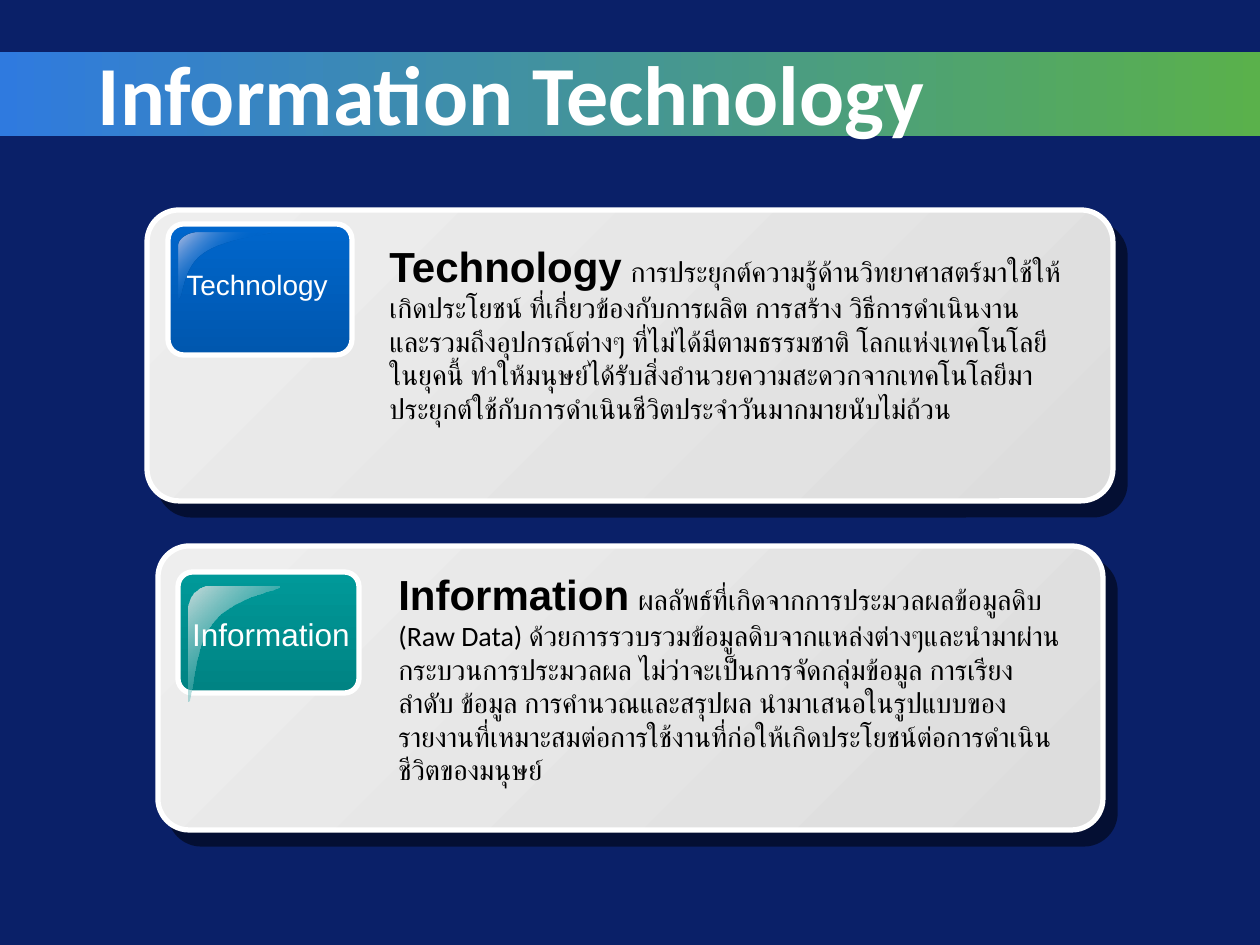
from lxml.etree import SubElement
from pptx import Presentation
from pptx.dml.color import RGBColor
from pptx.enum.shapes import MSO_SHAPE
from pptx.enum.text import MSO_ANCHOR, PP_ALIGN
from pptx.oxml import parse_xml
from pptx.oxml.ns import nsdecls, qn
from pptx.util import Pt

PX = 914400 // 126  # EMU in one px

TITLE = "Information Technology"
WHITE, BLACK = "FFFFFF", "000000"
CARD_STOPS = [(0, "EEEEEE", 100), (100, "DDDDDD", 100)]

# Gradient stops are (position %, colour, opacity %); boxes are px
CARDS = [
    dict(name="Technology", label_size=16,
         text="การประยุกต์ความรู้ด้านวิทยาศาสตร์มาใช้ให้เกิดประโยชน์ ที่เกี่ยวข้องกับการผลิต "
              "การสร้าง วิธีการดำเนินงาน และรวมถึงอุปกรณ์ต่างๆ ที่ไม่ได้มีตามธรรมชาติ "
              "โลกแห่งเทคโนโลยีในยุคนี้ ทำให้มนุษย์ได้รับสิ่งอำนวยความสะดวกจากเทคโนโลยี"
              "มาประยุกต์ใช้กับการดำเนินชีวิตประจำวันมากมายนับไม่ถ้วน",
         card=(147, 210, 966, 291), badge=(168, 224, 184, 131),
         gloss=(179, 233, 92, 66), label=(173, 261, 168, 47), body=(377, 234, 701, 233),
         badge_stops=[(0, "0066CC", 100), (100, "0057AE", 100)],
         gloss_stops=[(0, "B5C0E5", 100), (50, "0066CC", 0), (100, "B5C0E5", 100)]),
    dict(name="Information", label_size=18,
         text="ผลลัพธ์ที่เกิดจากการประมวลผลข้อมูลดิบ (Raw Data) "
              "ด้วยการรวบรวมข้อมูลดิบจากแหล่งต่างๆและนำมาผ่านกระบวนการประมวลผล "
              "ไม่ว่าจะเป็นการจัดกลุ่มข้อมูล การเรียงลำดับ ข้อมูล การคำนวณและสรุปผล "
              "นำมาเสนอในรูปแบบของรายงานที่เหมาะสมต่อการใช้งานที่ก่อให้เกิดประโยชน์"
              "ต่อการดำเนินชีวิตของมนุษย์",
         card=(158, 546, 945, 284), badge=(178, 572, 181, 121),
         gloss=(189, 587, 91, 116), label=(179, 609, 184, 50), body=(386, 562, 694, 267),
         badge_stops=[(0, "009999", 100), (100, "008383", 100)],
         gloss_stops=[(0, "C9DBDB", 100), (100, "009999", 0)]),
]

# Gloss outline as Bezier curves, in fractions of its box
GLOSS_CURVES = [
    [(0.21, 0), (0.11, 0), (0, 0.09), (0, 0.2)],
    [(0, 0.99), (0.06, 1), (0.03, 0.52), (0.28, 0.3)],
    [(0.28, 0.3), (0.53, 0.07), (1, 0.04), (1, 0)],
]


def color(value):
    return RGBColor.from_string(value)


def emu(box):
    return [v * PX for v in box]


def set_gradient(shape, stops, angle):
    shape.fill.background()
    stop_xml = "".join(
        f'<a:gs pos="{pos * 1000}"><a:srgbClr val="{c}"><a:alpha val="{alpha * 1000}"/>'
        f'</a:srgbClr></a:gs>' for pos, c, alpha in stops)
    grad = parse_xml(f'<a:gradFill {nsdecls("a")} rotWithShape="1"><a:gsLst>{stop_xml}</a:gsLst>'
                     f'<a:lin ang="{angle * 60000}" scaled="0"/></a:gradFill>')
    props = shape._element.spPr
    props.replace(props.find(qn("a:noFill")), grad)


def add_panel(shapes, kind, box, stops, angle, corner=None):
    sp = shapes.add_shape(kind, *emu(box))
    sp.shadow.inherit = False
    set_gradient(sp, stops, angle)
    if corner is None:
        sp.line.fill.background()
    else:
        sp.adjustments[0] = corner
        sp.line.color.rgb = color(WHITE)
        sp.line.width = Pt(3)
    return sp


def add_drop_shadow(sp):
    effects = sp._element.spPr.find(qn("a:effectLst"))
    shadow = SubElement(effects, qn("a:outerShdw"), blurRad="0", dist=str(Pt(10.6)),
                        dir=str(49 * 60000), algn="ctr", rotWithShape="0")
    black = SubElement(shadow, qn("a:srgbClr"), val=BLACK)
    SubElement(black, qn("a:alpha"), val="50000")


def curve_points(curve, box, steps=12):
    x, y, w, h = box
    for i in range(steps + 1):
        t = i / steps
        weights = ((1 - t) ** 3, 3 * t * (1 - t) ** 2, 3 * t * t * (1 - t), t ** 3)
        u, v = (sum(k * pt[axis] for k, pt in zip(weights, curve)) for axis in (0, 1))
        yield round((x + u * w) * PX), round((y + v * h) * PX)


def add_gloss(shapes, box, stops):
    points = [pt for curve in GLOSS_CURVES for pt in curve_points(curve, box)]
    builder = shapes.build_freeform(*points[0])
    builder.add_line_segments(points[1:], close=True)
    sp = builder.convert_to_shape()
    sp.shadow.inherit = False
    set_gradient(sp, stops, 45)
    sp.line.fill.background()


def add_run(p, text, size, font, rgb, bold=False):
    r = p.add_run()
    r.text = text
    for key, value in dict(size=Pt(size), name=font, bold=bold).items():
        setattr(r.font, key, value)
    r.font.color.rgb = color(rgb)


def add_text(shapes, box, runs, align, wrap):
    tf = shapes.add_textbox(*emu(box)).text_frame
    tf.word_wrap = wrap
    p = tf.paragraphs[0]
    p.alignment = align
    for run in runs:
        add_run(p, *run)


prs = Presentation()
prs.slide_width, prs.slide_height = emu((1260, 945))
s = prs.slides.add_slide(prs.slide_layouts[5])
s.background.fill.solid()
s.background.fill.fore_color.rgb = color("0A2068")

# Title on its gradient band
title = s.shapes.title
title.left, title.top, title.width, title.height = emu((63, 53, 914, 78))
tf = title.text_frame
for key, value in dict(vertical_anchor=MSO_ANCHOR.MIDDLE, word_wrap=True,
                       margin_right=52 * PX).items():
    setattr(tf, key, value)
tf.paragraphs[0].alignment = PP_ALIGN.RIGHT
add_run(tf.paragraphs[0], TITLE, 48, "Calibri", WHITE, True)
band = add_panel(s.shapes, MSO_SHAPE.RECTANGLE, (0, 52, 1260, 84),
                 [(0, "2F7ADF", 100), (100, "5AB14B", 100)], 0)
title._element.addprevious(band._element)

# Cards: panel, glossy badge with label, definition
for c in CARDS:
    shapes = s.shapes.add_group_shape().shapes
    panel = add_panel(shapes, MSO_SHAPE.ROUNDED_RECTANGLE, c["card"], CARD_STOPS, 45, 0.11)
    add_drop_shadow(panel)
    add_panel(shapes, MSO_SHAPE.ROUNDED_RECTANGLE, c["badge"], c["badge_stops"], 90, 0.12)
    add_gloss(shapes, c["gloss"], c["gloss_stops"])
    add_text(shapes, c["label"], [(c["name"], c["label_size"], "Arial", WHITE)],
             PP_ALIGN.CENTER, False)
    add_text(shapes, c["body"], [(c["name"], 24, "Arial", BLACK, True),
                                 (" ", 18, "Arial", BLACK),
                                 (c["text"], 16, "Calibri", BLACK)], PP_ALIGN.LEFT, True)

prs.save("out.pptx")
